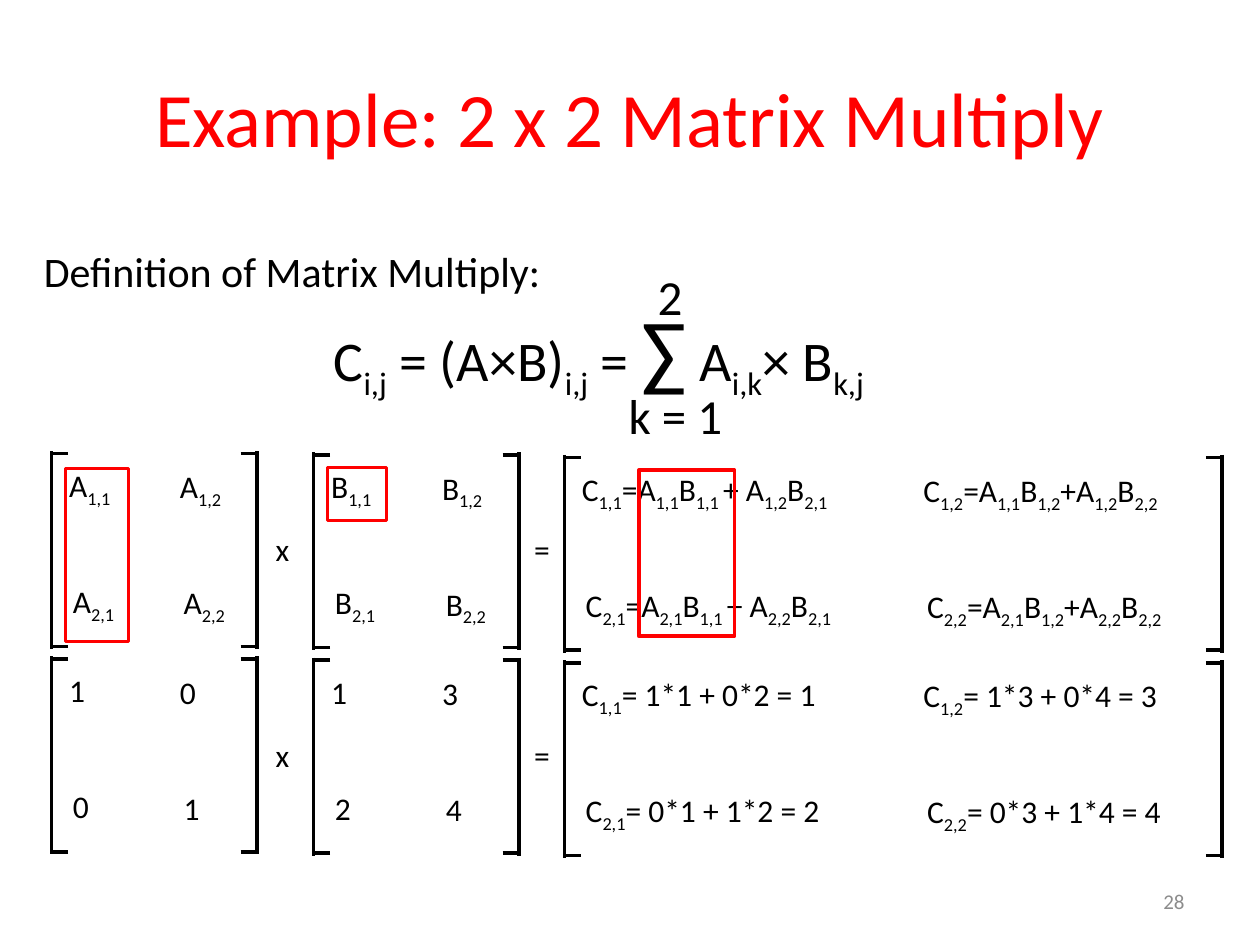
from dataclasses import dataclass

from lxml import etree
from pptx import Presentation
from pptx.dml.color import RGBColor
from pptx.enum.shapes import MSO_CONNECTOR, MSO_SHAPE
from pptx.enum.text import MSO_ANCHOR, PP_ALIGN
from pptx.oxml.ns import qn
from pptx.util import Inches, Pt

STRAIGHT = MSO_CONNECTOR.STRAIGHT
RECTANGLE = MSO_SHAPE.RECTANGLE
MIDDLE = MSO_ANCHOR.MIDDLE
LEFT, CENTER, RIGHT = PP_ALIGN.LEFT, PP_ALIGN.CENTER, PP_ALIGN.RIGHT


@dataclass(frozen=True)
class Theme:
    font: str = "Calibri"
    ink: RGBColor = RGBColor(0, 0, 0)
    accent: RGBColor = RGBColor(255, 0, 0)
    muted: RGBColor = RGBColor(0x8C, 0x8C, 0x8C)
    title: int = 44
    sigma: int = 48
    formula: int = 32
    limit: int = 28
    lead: int = 24
    cell: int = 18
    number: int = 12
    line: int = 2


THEME = Theme()
MATRIX_HEIGHT = 1.53
MATRICES = [
    (0.41, 0, 1.63, 0.88),
    (2.49, 0.01, 1.63, 0.88),
    (4.48, 0.03, 5.22, 2.71),
]
OPERATORS = [("x", 2.09), ("=", 4.14)]
SYMBOLIC = [
    ["A[1,1]", "A[1,2]", "A[2,1]", "A[2,2]"],
    ["B[1,1]", "B[1,2]", "B[2,1]", "B[2,2]"],
    ["C[1,1]=A[1,1]B[1,1 ]+ A[1,2]B[2,1]", "C[1,2]=A[1,1]B[1,2]+A[1,2]B[2,2]",
     "C[2,1]=A[2,1]B[1,1 ]+ A[2,2]B[2,1]", "C[2,2]=A[2,1]B[1,2]+A[2,2]B[2,2]"],
]
NUMERIC = [
    ["1", "0", "0", "1"],
    ["1", "3", "2", "4"],
    ["C[1,1]= 1*1 + 0*2 = 1", "C[1,2]= 1*3 + 0*4 = 3",
     "C[2,1]= 0*1 + 1*2 = 2", "C[2,2]= 0*3 + 1*4 = 4"],
]
HIGHLIGHTS = [
    (0.52, 3.72, 0.5, 1.37),
    (2.6, 3.71, 0.47, 0.42),
    (5.07, 3.73, 0.76, 1.32),
]


def style_paragraph(paragraph, size, color, alignment=LEFT):
    paragraph.alignment = alignment
    paragraph.font.name = THEME.font
    paragraph.font.size = Pt(size)
    paragraph.font.color.rgb = color


def add_text(shapes, box, text, size, color=THEME.ink, alignment=LEFT):
    shape = shapes.add_textbox(*map(Inches, box))
    shape.text_frame.word_wrap = True
    paragraph = shape.text_frame.paragraphs[0]
    style_paragraph(paragraph, size, color, alignment)
    for index, part in enumerate(text.replace("]", "[").split("[")):
        if part:
            run = paragraph.add_run()
            run.text = part
            if index % 2:
                run._r.get_or_add_rPr().set("baseline", "-25000")
    return shape


def add_line(shapes, *ends):
    connector = shapes.add_connector(STRAIGHT, *map(Inches, ends))
    connector.line.color.rgb = THEME.ink
    connector.line.width = Pt(THEME.line)
    etree.SubElement(connector._element.spPr, qn("a:effectLst"))


def add_title(slide, box):
    title = slide.shapes.title
    title.left, title.top, title.width, title.height = map(Inches, box)
    title.text_frame.text = "Example: 2 x 2 Matrix Multiply"
    title.text_frame.vertical_anchor = MIDDLE
    style_paragraph(title.text_frame.paragraphs[0], THEME.title, THEME.accent, CENTER)


def add_formula(slide, left, top):
    shapes = slide.shapes.add_group_shape().shapes
    formula = add_text(shapes, (left, top, 4.7, 0.91),
                       "C[i,j] = (A×B)[i,j] = [] A[i,k]× B[k,j]", THEME.formula)
    runs = formula.text_frame.paragraphs[0].runs
    runs[4].text = " = ∑"
    runs[4].text = " = "
    sigma = formula.text_frame.paragraphs[0].add_run()
    sigma.text = "∑"
    sigma.font.size = Pt(THEME.sigma)
    runs[4]._r.addnext(sigma._r)
    add_text(shapes, (left + 2.57, top - 0.24, 0.52, 0.57), "2", THEME.limit)
    add_text(shapes, (left + 2.34, top + 0.7, 1.41, 0.57), "k = 1", THEME.limit)


def add_matrix(shapes, box, column_step, cells):
    left, top, width, height = box
    bottom = top + height
    for edge, direction in ((left, 1), (left + width, -1)):
        add_line(shapes, edge, top - 0.02, edge, bottom + 0.02)
        for y in (top, bottom):
            add_line(shapes, edge + 0.13 * direction, y, edge - 0.01 * direction, y)
    for index, text in enumerate(cells):
        row, column = divmod(index, 2)
        x = left + 0.04 + column_step * column + 0.03 * row
        y = top + 0.05 + 0.92 * row + 0.01 * column
        add_text(shapes, (x, y, column_step - 0.1, 0.4), text, THEME.cell)


def add_equation(slide, top, matrices):
    shapes = slide.shapes.add_group_shape().shapes
    for (left, drop, width, step), cells in zip(MATRICES, matrices):
        add_matrix(shapes, (left, top + drop, width, MATRIX_HEIGHT), step, cells)
    for symbol, left in OPERATORS:
        add_text(shapes, (left, top + 0.56, 0.33, 0.4), symbol, THEME.cell)
    return shapes


def add_highlight(shapes, box):
    shape = shapes.add_shape(RECTANGLE, *map(Inches, box))
    shape.shadow.inherit = False
    shape.fill.background()
    shape.line.color.rgb = THEME.accent
    shape.line.width = Pt(THEME.line)


def main():
    presentation = Presentation()
    presentation.slide_width, presentation.slide_height = Inches(10), Inches(7.5)
    slide = presentation.slides.add_slide(presentation.slide_layouts[5])
    add_title(slide, (0.5, 0.3, 9, 1.25))
    add_formula(slide, 2.55, 2.31)
    add_text(slide.shapes, (0.25, 1.9, 4.3, 0.5),
             "Definition of Matrix Multiply:", THEME.lead)
    symbolic = add_equation(slide, 3.6, SYMBOLIC)
    for box in HIGHLIGHTS:
        add_highlight(symbolic, box)
    add_equation(slide, 5.23, NUMERIC)
    number = add_text(slide.shapes, (7.17, 6.95, 2.33, 0.4), "28",
                      THEME.number, THEME.muted, RIGHT)
    number.text_frame.vertical_anchor = MIDDLE
    presentation.save("out.pptx")


if __name__ == "__main__":
    main()
